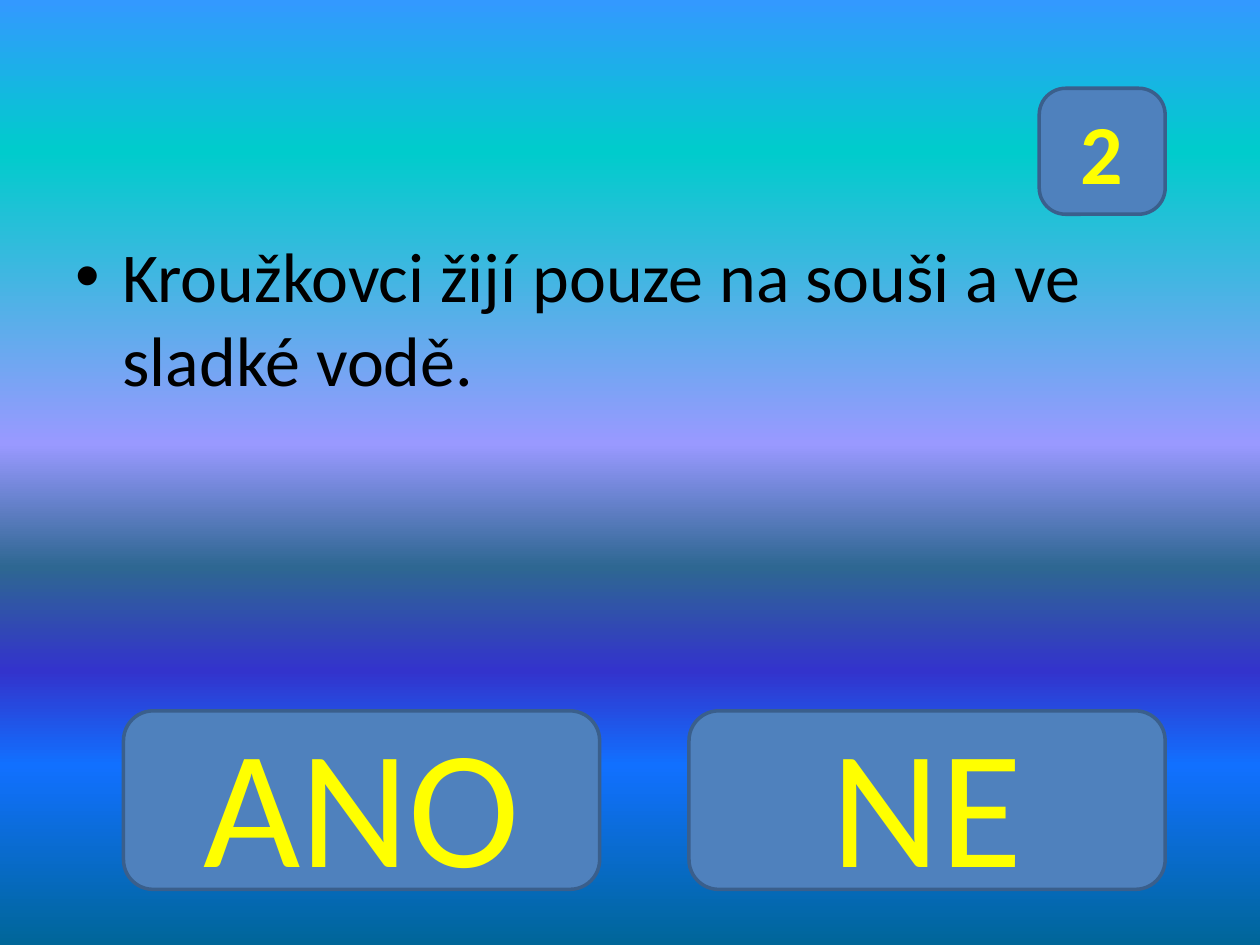
"""Build a yes/no quiz slide on a gradient background."""
import pptx
import pptx.util
import pptx.dml.color
import pptx.enum.shapes
import pptx.enum.text
import pptx.oxml
import pptx.oxml.ns
from pptx.util import Cm, Pt

COLORS = {"fill": "4F81BD", "line": "3A5F8C", "label": "FFFF00", "text": "000000"}
FONT = "Calibri"
GRADIENT = [(0, "3399FF"), (16, "00CCCC"), (47, "9999FF"), (60, "2E6792"),
            (71, "3333CC"), (81, "1170FF"), (100, "006699")]
STATEMENT = "Kroužkovci žijí pouze na souši a ve sladké vodě."
ANSWERS = ["ANO", "NE"]
NUMBER = "2"
ANSWER_W, ANSWER_H, ANSWER_TOP = 9.6, 3.6, 14.33
ANSWER_LEFT, ANSWER_STEP = 2.49, 11.4
BADGE_SIZE, BADGE_TOP = 2.54, 1.78
INDENT = 0.95


def rgb(name):
    return pptx.dml.color.RGBColor.from_string(COLORS[name])


def add_run(p, text, size, color, bold=False):
    r = p.add_run()
    r.text = text
    r.font.name, r.font.size, r.font.bold = FONT, Pt(size), bold
    r.font.color.rgb = rgb(color)


def set_background(s):
    fill = s.background.fill
    fill.gradient()
    fill.gradient_angle = 270
    stops = next(s.element.iter(pptx.oxml.ns.qn("a:gsLst")))
    for stop in list(stops):
        stops.remove(stop)
    for percent, color in GRADIENT:
        stops.append(pptx.oxml.parse_xml(
            f'<a:gs {pptx.oxml.ns.nsdecls("a")} pos="{percent * 1000}">'
            f'<a:srgbClr val="{color}"/></a:gs>'))


def add_statement(s):
    tf = s.shapes.add_textbox(Cm(1.27), Cm(4.57), Cm(22.86), Cm(8.74)).text_frame
    tf.word_wrap = True
    p = tf.paragraphs[0]
    add_run(p, STATEMENT, 40, "text")
    props = p._p.get_or_add_pPr()
    props.set("marL", str(Cm(INDENT)))
    props.set("indent", str(-Cm(INDENT)))
    for xml in ('<a:buFont {} typeface="Arial"/>', '<a:buChar {} char="•"/>'):
        props.append(pptx.oxml.parse_xml(xml.format(pptx.oxml.ns.nsdecls("a"))))


def add_button(s, text, left, top, width, height, size, bold=False):
    sp = s.shapes.add_shape(pptx.enum.shapes.MSO_SHAPE.ROUNDED_RECTANGLE,
                            Cm(left), Cm(top), Cm(width), Cm(height))
    sp.shadow.inherit = False
    sp.fill.solid()
    sp.fill.fore_color.rgb = rgb("fill")
    sp.line.color.rgb = rgb("line")
    sp.line.width = Pt(2)
    tf = sp.text_frame
    tf.word_wrap = True
    tf.vertical_anchor = pptx.enum.text.MSO_ANCHOR.MIDDLE
    p = tf.paragraphs[0]
    p.alignment = pptx.enum.text.PP_ALIGN.CENTER
    add_run(p, text, size, "label", bold)
    return sp


def main():
    prs = pptx.Presentation()
    prs.slide_width, prs.slide_height = Cm(25.4), Cm(19.05)
    s = prs.slides.add_slide(prs.slide_layouts[6])
    set_background(s)
    add_statement(s)
    for i, answer in enumerate(ANSWERS):
        add_button(s, answer, ANSWER_LEFT + i * ANSWER_STEP, ANSWER_TOP,
                   ANSWER_W, ANSWER_H, 96)
    right = ANSWER_LEFT + ANSWER_STEP + ANSWER_W
    badge = add_button(s, NUMBER, right - BADGE_SIZE, BADGE_TOP,
                       BADGE_SIZE, BADGE_SIZE, 48, True)
    badge.adjustments[0] = 0.21
    prs.save("out.pptx")


if __name__ == "__main__":
    main()
